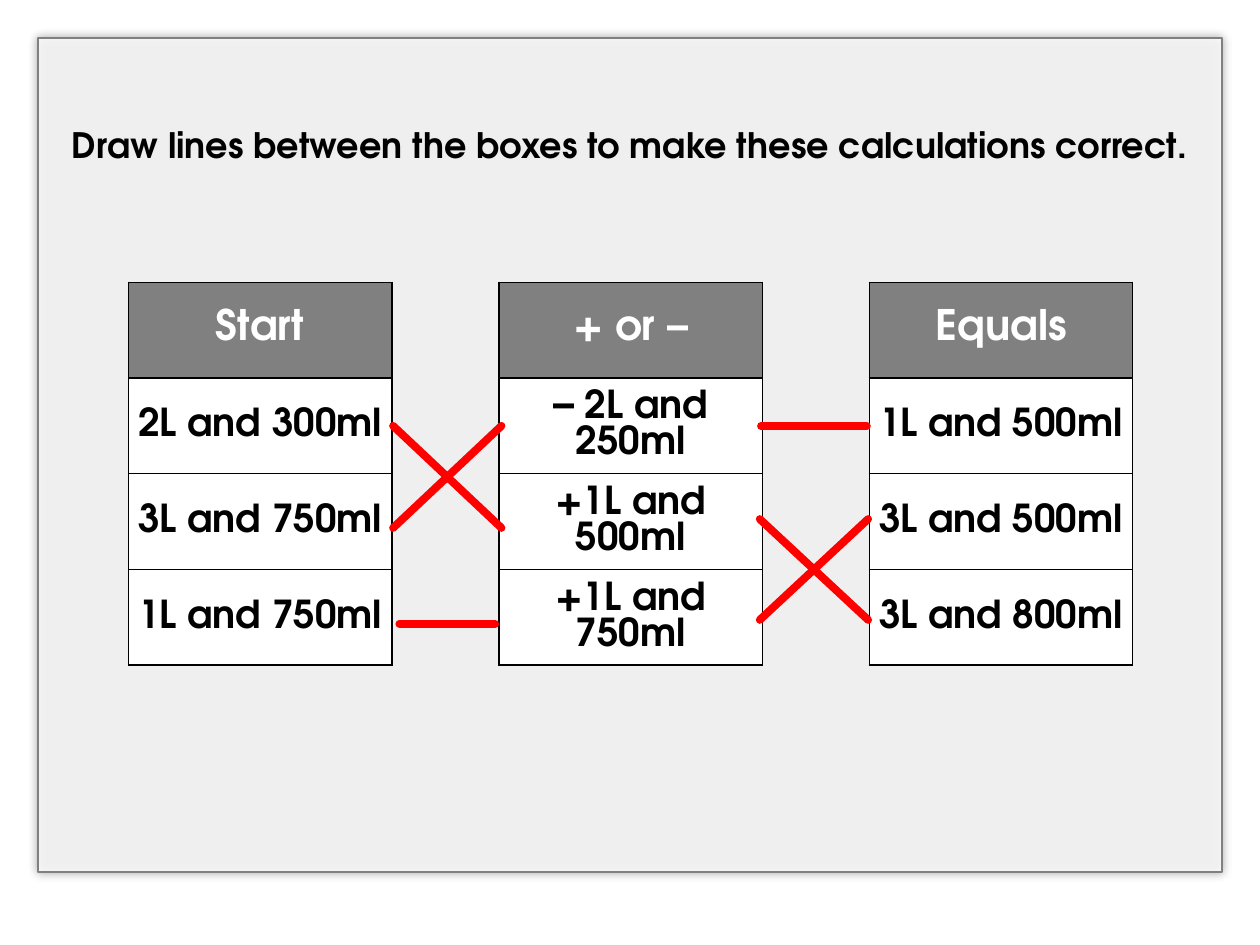
from lxml.etree import SubElement
from pptx import Presentation
from pptx.dml.color import RGBColor as Rgb
from pptx.enum.shapes import MSO_CONNECTOR as Connector, MSO_SHAPE as Shape
from pptx.enum.text import MSO_ANCHOR as Anchor, PP_ALIGN as Align
from pptx.oxml.ns import qn
from pptx.util import Inches, Pt

COLOURS = {"ink": "000000", "paper": "FFFFFF", "grey": "808080", "answer": "FF0000"}
FONT = "TeX Gyre Adventor"

# Table grid, in inches
LEFT, TOP = 1.02, 2.24
BOX, GAP, ROW = 2.09, 0.85, 0.76

HEADINGS = ["Start", "+ or –", "Equals"]
ROWS = [
    ["2L and 300ml", "– 2L and 250ml", "1L and 500ml"],
    ["3L and 750ml", "+1L and 500ml", "3L and 500ml"],
    ["1L and 750ml", "+1L and 750ml", "3L and 800ml"],
]

# For each gap: left and right ends, heights of the rows, inset of level
# lines, and the pairs of rows that belong together
ANSWERS = [
    (3.12, 3.98, [3.38, 4.19, 4.95], 0.05, [(0, 1), (1, 0), (2, 2)]),
    (6.03, 6.89, [3.38, 4.12, 4.92], 0.01, [(0, 0), (1, 2), (2, 1)]),
]


def colour(name):
    return Rgb.from_string(COLOURS[name])


def style(paragraph, size, ink):
    paragraph.alignment = Align.CENTER
    font = paragraph.font
    font.name, font.size, font.bold = FONT, Pt(size), True
    font.color.rgb = colour(ink)


def add_panel(slide, instruction):
    panel = slide.shapes.add_shape(
        Shape.RECTANGLE, Inches(0.3), Inches(0.3), Inches(9.4), Inches(6.62))
    panel.fill.solid()
    panel.fill.fore_color.rgb = colour("paper")
    panel.line.color.rgb = colour("grey")
    panel.line.width = Pt(1)

    # Translucent fill and soft shadow all round
    properties = panel.fill._xPr
    fill = properties.find(qn("a:solidFill"))
    SubElement(fill[0], qn("a:alpha"), val="82000")
    effects = SubElement(properties, qn("a:effectLst"))
    shadow = SubElement(effects, qn("a:outerShdw"), blurRad=str(Pt(5)),
                        dist="0", dir="0", algn="ctr", rotWithShape="0")
    shade = SubElement(shadow, qn("a:srgbClr"), val=COLOURS["ink"])
    SubElement(shade, qn("a:alpha"), val="40000")

    frame = panel.text_frame
    frame.word_wrap = True
    frame.vertical_anchor = Anchor.TOP
    frame.margin_top = Inches(0.68)
    frame.paragraphs[0].text = instruction
    style(frame.paragraphs[0], 20, "ink")


def set_borders(cell, sides):
    properties = cell._tc.get_or_add_tcPr()
    for position, side in enumerate("LRTB"):
        border = properties.makeelement(qn(f"a:ln{side}"), {"w": str(Pt(1))})
        properties.insert(position, border)
        if side in sides:
            fill = SubElement(border, qn("a:solidFill"))
            SubElement(fill, qn("a:srgbClr"), val=COLOURS["ink"])
        else:
            SubElement(border, qn("a:noFill"))


def fill_cell(cell, text, size, ink, ground):
    cell.fill.solid()
    cell.fill.fore_color.rgb = colour(ground)
    cell.vertical_anchor = Anchor.MIDDLE
    cell.margin_left = cell.margin_right = cell.margin_top = cell.margin_bottom = 0
    paragraph = cell.text_frame.paragraphs[0]
    # A leading minus sign is set a little larger
    if text.startswith("– "):
        minus = paragraph.add_run()
        minus.text, text = text[:1], text[1:]
        minus.font.size = Pt(24)
    paragraph.add_run().text = text
    style(paragraph, size, ink)
    paragraph.line_spacing = Pt(20.6)


def add_boxes(slide):
    widths = [BOX, GAP, BOX, GAP, BOX]
    lines = [HEADINGS] + ROWS
    table = slide.shapes.add_table(
        len(lines), len(widths), Inches(LEFT), Inches(TOP),
        Inches(sum(widths)), Inches(ROW * len(lines))).table
    table.first_row = table.horz_banding = False
    for column, width in zip(table.columns, widths):
        column.width = Inches(width)

    for r, texts in enumerate(lines):
        look = (22, "ink", "paper") if r else (24, "paper", "grey")
        for c in range(len(widths)):
            cell = table.cell(r, c)
            if c % 2:
                cell.fill.background()
                set_borders(cell, "LR")
            else:
                fill_cell(cell, texts[c // 2], *look)
                set_borders(cell, "LRTB")


def add_answer(slide, x1, y1, x2, y2):
    answer = slide.shapes.add_connector(
        Connector.STRAIGHT, Inches(x1), Inches(y1), Inches(x2), Inches(y2))
    answer.line.color.rgb = colour("answer")
    answer.line.width = Pt(4.5)
    answer.line._get_or_add_ln().set("cap", "rnd")
    SubElement(answer._element.spPr, qn("a:effectLst"))


def main():
    deck = Presentation()
    deck.slide_width, deck.slide_height = Inches(10), Inches(7.5)
    slide = deck.slides.add_slide(deck.slide_layouts[6])

    # Panel with the instruction, then the boxes
    add_panel(slide, "Draw lines between the boxes to make these calculations correct.")
    add_boxes(slide)

    # Answer lines across both gaps
    for left, right, heights, inset, pairs in ANSWERS:
        for start, end in pairs:
            trim = inset if start == end else 0
            add_answer(slide, left + trim, heights[start], right - trim, heights[end])

    deck.save("out.pptx")


if __name__ == "__main__":
    main()
